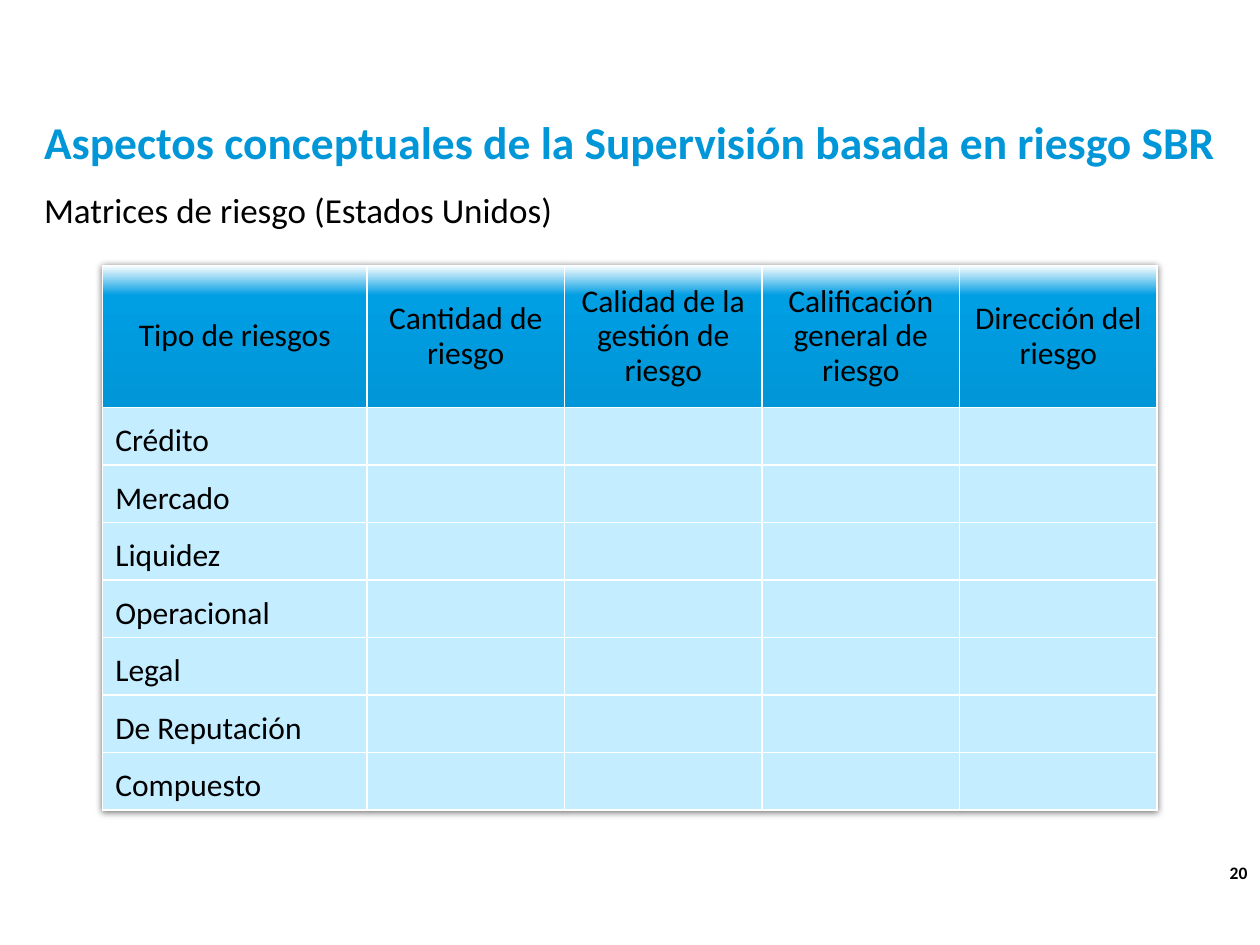
from dataclasses import dataclass

from lxml.etree import SubElement
from pptx import Presentation
from pptx.dml.color import RGBColor
from pptx.enum.text import MSO_ANCHOR as Anchor, MSO_AUTO_SIZE as AutoSize, PP_ALIGN as Align
from pptx.oxml import parse_xml
from pptx.oxml.ns import nsdecls, qn
from pptx.util import Pt

FONT = "Calibri"
BLACK, WHITE, BLUE, PALE_BLUE = "000000", "FFFFFF", "0096D7", "C4EDFF"
HEADER_STOPS = ((0, WHITE), (21, "009EE3"), (100, BLUE))

HEADINGS = ("Tipo de riesgos", "Cantidad de riesgo", "Calidad de la gestión de riesgo",
            "Calificación general de riesgo", "Dirección del riesgo")
RISKS = ("Crédito", "Mercado", "Liquidez", "Operacional", "Legal", "De Reputación", "Compuesto")

TABLE_LEFT, TABLE_TOP = 58.7, 151.6
FIRST_COLUMN, OTHER_COLUMN = 151, 112.9
HEADER_HEIGHT, ROW_HEIGHT = 81.4, 32.85


@dataclass
class Label:
    text: str
    left: float
    top: float
    width: float
    height: float
    size: float
    color: str = BLACK
    bold: bool = False
    align: Align = Align.LEFT
    spacing: float = 1.0


TITLE = Label("Aspectos conceptuales de la Supervisión basada en riesgo SBR",
              25.2, 69.8, 680.4, 26.6, 26, BLUE, True, spacing=0.85)
SUBTITLE = Label("Matrices de riesgo (Estados Unidos)", 25.2, 111.6, 679.7, 20.9, 20, spacing=0.85)
PAGE_NUMBER = Label("20", 689, 492.5, 23.8, 11.5, 10, bold=True, align=Align.RIGHT)


def rgb(color: str) -> RGBColor:
    return RGBColor.from_string(color)


def format_text(frame, text: str, size: float, color: str, bold: bool,
                align: Align, spacing: float) -> None:
    frame.text = text
    para = frame.paragraphs[0]
    para.alignment = align
    para.line_spacing = spacing
    for span in para.runs:
        span.font.name = FONT
        span.font.size = Pt(size)
        span.font.bold = bold
        span.font.color.rgb = rgb(color)


def place_label(box, label: Label) -> None:
    box.left, box.top = Pt(label.left), Pt(label.top)
    box.width, box.height = Pt(label.width), Pt(label.height)
    frame = box.text_frame
    frame.word_wrap = True
    frame.auto_size = AutoSize.SHAPE_TO_FIT_TEXT
    frame.vertical_anchor = Anchor.TOP
    frame.margin_left = frame.margin_top = frame.margin_right = frame.margin_bottom = 0
    format_text(frame, label.text, label.size, label.color, label.bold, label.align, label.spacing)


def add_label(page, label: Label) -> None:
    place_label(page.shapes.add_textbox(0, 0, 0, 0), label)


def add_borders(cell) -> None:
    properties = cell._tc.get_or_add_tcPr()
    for side in ("lnL", "lnR", "lnT", "lnB"):
        line = SubElement(properties, qn(f"a:{side}"), w=str(Pt(1)))
        fill = SubElement(line, qn("a:solidFill"))
        SubElement(fill, qn("a:srgbClr"), val=WHITE)


def fill_header(cell) -> None:
    """Fill the cell with the vertical header gradient."""
    gradient = SubElement(cell._tc.get_or_add_tcPr(), qn("a:gradFill"), rotWithShape="1")
    stops = SubElement(gradient, qn("a:gsLst"))
    for position, color in HEADER_STOPS:
        stop = SubElement(stops, qn("a:gs"), pos=str(position * 1000))
        SubElement(stop, qn("a:srgbClr"), val=color)
    SubElement(gradient, qn("a:lin"), ang="5400000", scaled="0")


def add_table_shadow(table) -> None:
    table._tbl.tblPr.insert(0, parse_xml(
        f'<a:effectLst {nsdecls("a")}>'
        f'<a:outerShdw blurRad="{Pt(4)}" dist="{Pt(1)}" dir="5400000" rotWithShape="0">'
        '<a:srgbClr val="000000"><a:alpha val="60000"/></a:srgbClr>'
        '</a:outerShdw></a:effectLst>'))


def add_risk_table(page) -> None:
    rows = [HEADINGS] + [(risk,) + ("",) * (len(HEADINGS) - 1) for risk in RISKS]
    width = FIRST_COLUMN + OTHER_COLUMN * (len(HEADINGS) - 1)
    height = HEADER_HEIGHT + ROW_HEIGHT * len(RISKS)
    table = page.shapes.add_table(len(rows), len(HEADINGS), Pt(TABLE_LEFT), Pt(TABLE_TOP),
                                  Pt(width), Pt(height)).table
    table.horz_banding = False
    add_table_shadow(table)
    for index, column in enumerate(table.columns):
        column.width = Pt(OTHER_COLUMN if index else FIRST_COLUMN)
    for index, (row, texts) in enumerate(zip(table.rows, rows)):
        is_header = index == 0
        row.height = Pt(HEADER_HEIGHT if is_header else ROW_HEIGHT)
        for cell, text in zip(row.cells, texts):
            add_borders(cell)
            if is_header:
                fill_header(cell)
            else:
                cell.fill.solid()
                cell.fill.fore_color.rgb = rgb(PALE_BLUE)
            cell.vertical_anchor = Anchor.MIDDLE if is_header else Anchor.BOTTOM
            if text:
                format_text(cell.text_frame, text, 18, BLACK, False,
                            Align.CENTER if is_header else Align.LEFT, 0.9)


def main() -> None:
    deck = Presentation()
    deck.slide_width, deck.slide_height = Pt(720), Pt(540)
    page = deck.slides.add_slide(deck.slide_layouts[5])
    place_label(page.shapes.title, TITLE)
    add_label(page, SUBTITLE)
    add_risk_table(page)
    add_label(page, PAGE_NUMBER)
    deck.save("out.pptx")


if __name__ == "__main__":
    main()
